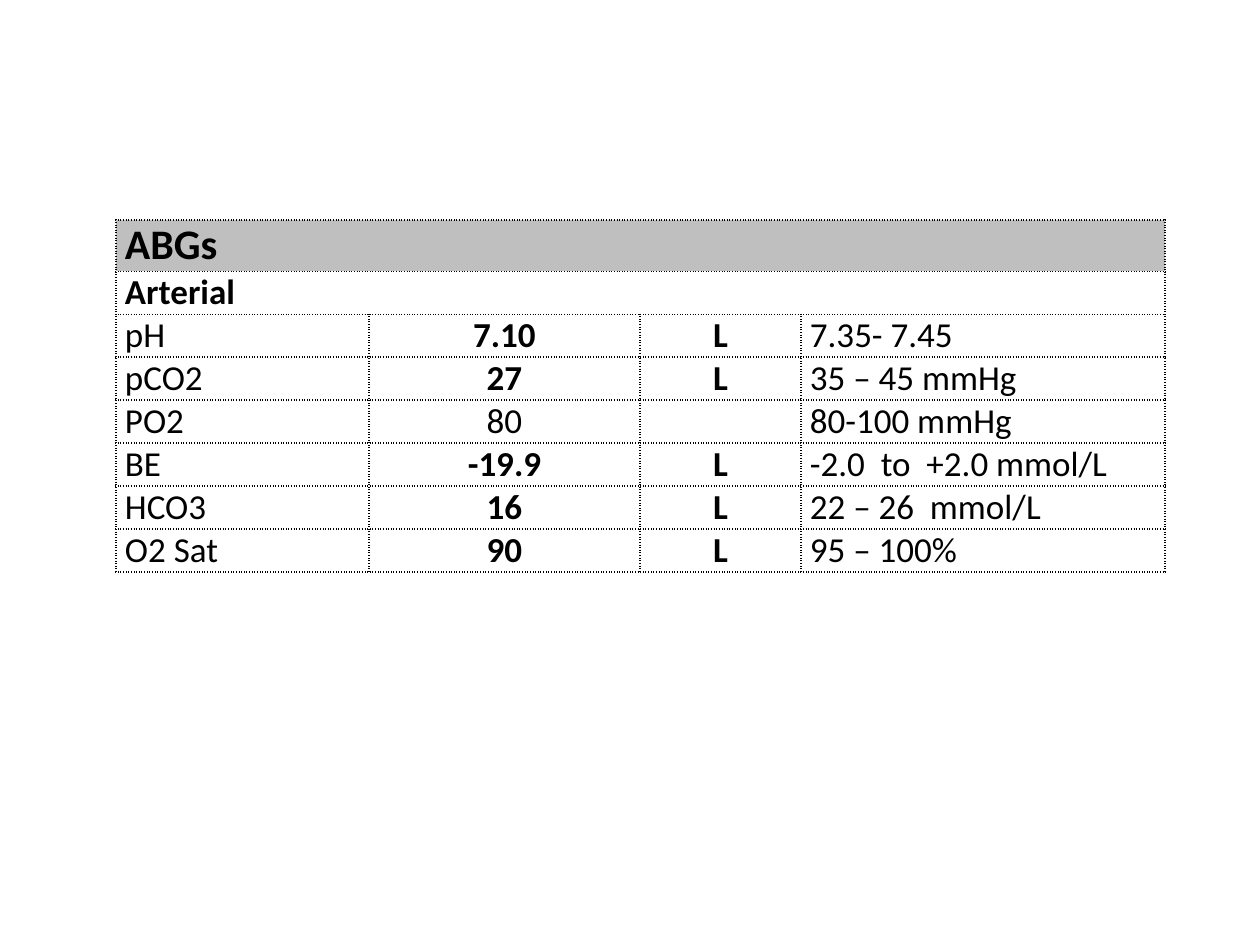
from dataclasses import dataclass

from lxml import etree
from pptx import Presentation
from pptx.dml.color import RGBColor
from pptx.enum.text import PP_ALIGN
from pptx.oxml.ns import qn
from pptx.util import Pt

LEFT, CENTER = PP_ALIGN.LEFT, PP_ALIGN.CENTER
EMU_PER_PX = 914400 / 126
BLANK_LAYOUT = 6

COLUMN_WIDTHS = (253, 271, 161, 364)
TITLE_HEIGHT, ROW_HEIGHT = 51, 43
HEADINGS = ("ABGs", "Arterial")
RESULTS = (
    ("pH", "7.10", "L", "7.35- 7.45"),
    ("pCO2", "27", "L", "35 – 45 mmHg"),
    ("PO2", "80", "", "80-100 mmHg"),
    ("BE", "-19.9", "L", "-2.0  to  +2.0 mmol/L"),
    ("HCO3", "16", "L", "22 – 26  mmol/L"),
    ("O2 Sat", "90", "L", "95 – 100%"),
)


@dataclass(frozen=True)
class Theme:
    """Hold the colours, font and type sizes of the deck."""

    font: str = "Calibri"
    ink: str = "000000"
    band: str = "BFBFBF"
    title_size: int = 24
    body_size: int = 20
    border_width: int = 1


THEME = Theme()


def px(length):
    """Turn pixels into EMU."""
    return round(length * EMU_PER_PX)


def write_text(cell, text, *, size=THEME.body_size, bold=False, align=LEFT):
    """Write one formatted line into a cell."""
    para = cell.text_frame.paragraphs[0]
    para.alignment = align
    para.font.size = Pt(size)
    if not text:
        return
    span = para.add_run()
    span.text = text
    span.font.name = THEME.font
    span.font.size = Pt(size)
    span.font.bold = bold
    span.font.color.rgb = RGBColor.from_string(THEME.ink)


def add_borders(cell):
    """Draw dotted lines on all four sides of a cell."""
    properties = cell._tc.get_or_add_tcPr()
    for side in ("a:lnL", "a:lnR", "a:lnT", "a:lnB"):
        line = etree.SubElement(properties, qn(side), w=str(Pt(THEME.border_width)))
        fill = etree.SubElement(line, qn("a:solidFill"))
        etree.SubElement(fill, qn("a:srgbClr"), val=THEME.ink)
        etree.SubElement(line, qn("a:prstDash"), val="dot")


def style_cell(cell, color=None):
    """Set the margins, borders and fill of a cell."""
    cell.margin_left = cell.margin_right = px(9)
    cell.margin_top = cell.margin_bottom = 0
    add_borders(cell)
    if color:
        cell.fill.solid()
        cell.fill.fore_color.rgb = RGBColor.from_string(color)
    else:
        cell.fill.background()


def add_grid(page, left, top):
    """Add the empty table with its columns, rows and cell styles."""
    heights = [TITLE_HEIGHT] + [ROW_HEIGHT] * (len(RESULTS) + 1)
    frame = page.shapes.add_table(
        len(heights), len(COLUMN_WIDTHS), px(left), px(top),
        px(sum(COLUMN_WIDTHS)), px(sum(heights)),
    )
    table = frame.table
    table.first_row = table.horz_banding = False
    for column, width in zip(table.columns, COLUMN_WIDTHS):
        column.width = px(width)
    for index, (row, height) in enumerate(zip(table.rows, heights)):
        row.height = px(height)
        for cell in row.cells:
            style_cell(cell, THEME.band if index == 0 else None)
    return table


def fill_headings(table):
    """Write the headings across the full table width."""
    last_column = len(COLUMN_WIDTHS) - 1
    for index, (text, size) in enumerate(
        zip(HEADINGS, (THEME.title_size, THEME.body_size))
    ):
        cell = table.cell(index, 0)
        cell.merge(table.cell(index, last_column))
        write_text(cell, text, size=size, bold=True)


def fill_results(table):
    """Write the results, with flagged values in bold."""
    for index, (test, value, flag, normal) in enumerate(RESULTS, len(HEADINGS)):
        abnormal = bool(flag)
        write_text(table.cell(index, 0), test)
        write_text(table.cell(index, 1), value, bold=abnormal, align=CENTER)
        write_text(table.cell(index, 2), flag, bold=abnormal, align=CENTER)
        write_text(table.cell(index, 3), normal)


def main():
    """Build the blood gas slide and save it."""
    deck = Presentation()
    deck.slide_width, deck.slide_height = px(1260), px(945)
    page = deck.slides.add_slide(deck.slide_layouts[BLANK_LAYOUT])
    table = add_grid(page, left=116, top=220)
    fill_headings(table)
    fill_results(table)
    deck.save("out.pptx")


if __name__ == "__main__":
    main()
